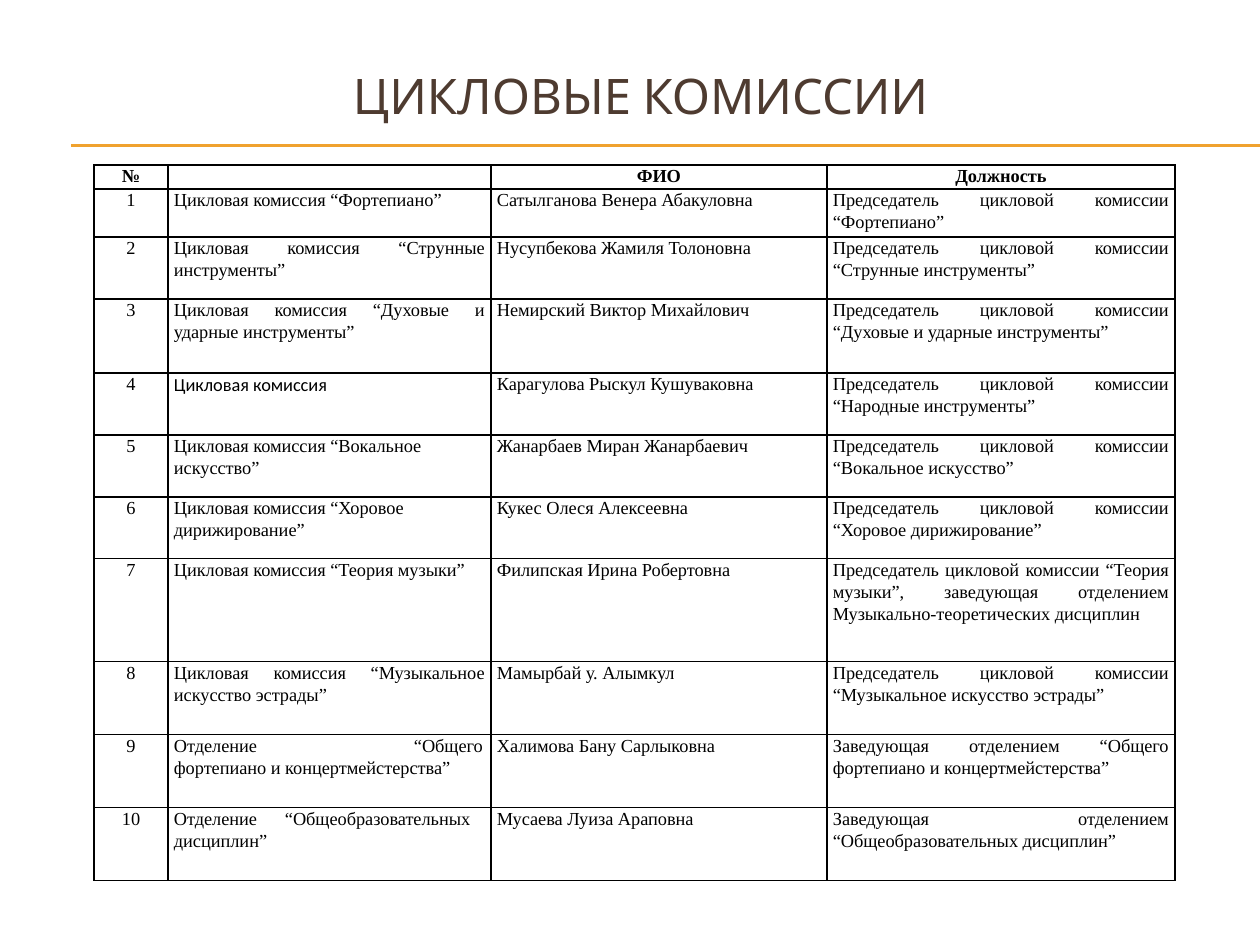
import pptx
import pptx.dml.color
import pptx.enum.shapes
import pptx.enum.text
import pptx.oxml
import pptx.oxml.ns
import pptx.util

ALIGN = pptx.enum.text.PP_ALIGN
HEADINGS = ["№", "", "ФИО", "Должность"]
CHAIR = "Председатель цикловой комиссии "
HEAD = "Заведующая отделением "
MEMBERS = [
    ("Цикловая комиссия “Фортепиано”", "Сатылганова Венера Абакуловна", CHAIR + "“Фортепиано”"),
    ("Цикловая комиссия “Струнные инструменты”", "Нусупбекова Жамиля Толоновна",
     CHAIR + "“Струнные инструменты”"),
    ("Цикловая комиссия “Духовые и ударные инструменты”", "Немирский Виктор Михайлович",
     CHAIR + "“Духовые и ударные инструменты”"),
    ("Цикловая комиссия", "Карагулова Рыскул Кушуваковна", CHAIR + "“Народные инструменты”"),
    ("Цикловая комиссия “Вокальное искусство”", "Жанарбаев Миран Жанарбаевич",
     CHAIR + "“Вокальное искусство”"),
    ("Цикловая комиссия “Хоровое дирижирование”", "Кукес Олеся Алексеевна",
     CHAIR + "“Хоровое дирижирование”"),
    ("Цикловая комиссия “Теория музыки”", "Филипская Ирина Робертовна",
     CHAIR + "“Теория музыки”, заведующая отделением Музыкально-теоретических дисциплин"),
    ("Цикловая комиссия “Музыкальное искусство эстрады”", "Мамырбай у. Алымкул",
     CHAIR + "“Музыкальное искусство эстрады”"),
    ("Отделение\t“Общего\vфортепиано и концертмейстерства”", "Халимова Бану Сарлыковна",
     HEAD + "“Общего фортепиано и концертмейстерства”"),
    ("Отделение\t“Общеобразовательных дисциплин”", "Мусаева Луиза Араповна",
     HEAD + "“Общеобразовательных дисциплин”"),
]
LEFT_ALIGNED = {4, 5, 6, 9, 10}
TAB_STOPS = {9: (309, "r"), 10: (111, "l")}
COLUMN_WIDTHS = [74, 323, 336, 348]
ROW_HEIGHTS = [24, 48, 62, 74, 62, 62, 62, 103, 73, 73, 73]


def px(length):
    """Turn px into EMU."""
    return pptx.util.Emu(round(length * 914400 / 126))


def color(value):
    """Turn a hex string into a colour."""
    return pptx.dml.color.RGBColor.from_string(value)


def add_xml(parent, tag, body="", **attributes):
    """Append a drawing element to a parent."""
    listed = "".join(f' {key}="{value}"' for key, value in attributes.items())
    namespace = pptx.oxml.ns.nsdecls("a")
    parent.append(pptx.oxml.parse_xml(f"<a:{tag} {namespace}{listed}>{body}</a:{tag}>"))


class Deck:
    """Hold the style and the current slide."""

    title_font = "Karla"
    table_font = "Times New Roman"
    title_color = "4E3B30"
    rule_color = "F0A22E"
    ink = "000000"

    def __init__(self):
        """Start a deck with one titled slide."""
        self.presentation = pptx.Presentation()
        self.presentation.slide_width = px(1260)
        self.presentation.slide_height = px(945)
        self.slide = self.presentation.slides.add_slide(self.presentation.slide_layouts[5])

    def style(self, paragraph, font, size, hex_color, align, bold=False):
        """Format a whole paragraph."""
        paragraph.alignment = align
        paragraph.font.name = font
        paragraph.font.size = pptx.util.Pt(size)
        paragraph.font.bold = bold
        paragraph.font.color.rgb = color(hex_color)

    def title(self, text, left, top, width, height):
        """Fill and place the title placeholder."""
        heading = self.slide.shapes.title
        heading.left, heading.top = px(left), px(top)
        heading.width, heading.height = px(width), px(height)
        heading.text_frame.text = text
        heading.text_frame.vertical_anchor = pptx.enum.text.MSO_ANCHOR.MIDDLE
        self.style(heading.text_frame.paragraphs[0], self.title_font, 28,
                   self.title_color, ALIGN.CENTER)

    def rule(self, left, right, y):
        """Draw a thin horizontal line."""
        rule = self.slide.shapes.add_connector(
            pptx.enum.shapes.MSO_CONNECTOR.STRAIGHT, px(left), px(y), px(right), px(y))
        rule.line.color.rgb = color(self.rule_color)
        rule.line.width = pptx.util.Pt(0.75)
        add_xml(rule._element.spPr, "effectLst")

    def table(self, left, top, widths, heights):
        """Add an unbanded table and return it."""
        table = self.slide.shapes.add_table(
            len(heights), len(widths), px(left), px(top), px(sum(widths)), px(sum(heights))).table
        table.first_row = table.horz_banding = False
        for column, width in zip(table.columns, widths):
            column.width = px(width)
        for row, height in zip(table.rows, heights):
            row.height = px(height)
        return table

    def cell(self, cell, text, align, bold=False, font=None, tab=None):
        """Write and format one bordered cell."""
        cell.margin_left = cell.margin_right = px(6)
        cell.margin_top = cell.margin_bottom = 0
        properties = cell._tc.get_or_add_tcPr()
        ink = f'<a:solidFill><a:srgbClr val="{self.ink}"/></a:solidFill>'
        for side in "LRTB":
            add_xml(properties, f"ln{side}", ink, w=pptx.util.Pt(1))
        cell.fill.background()
        cell.text_frame.text = text
        paragraph = cell.text_frame.paragraphs[0]
        paragraph.line_spacing = 1.07
        if tab:
            position, kind = tab
            add_xml(paragraph._p.get_or_add_pPr(), "tabLst",
                    f'<a:tab pos="{px(position)}" algn="{kind}"/>')
        self.style(paragraph, font or self.table_font, 10.5, self.ink, align, bold)


def main():
    """Build the slide and save it."""
    deck = Deck()
    for y in (145, 146):
        deck.rule(71, 1260, y)
    deck.title("ЦИКЛОВЫЕ КОМИССИИ", 42, 37, 1197, 116)
    table = deck.table(94, 165, COLUMN_WIDTHS, ROW_HEIGHTS)
    for column, heading in enumerate(HEADINGS):
        deck.cell(table.cell(0, column), heading, ALIGN.CENTER, bold=True)
    for number, (commission, person, post) in enumerate(MEMBERS, 1):
        deck.cell(table.cell(number, 0), str(number), ALIGN.CENTER)
        deck.cell(table.cell(number, 1), commission,
                  ALIGN.LEFT if number in LEFT_ALIGNED else ALIGN.JUSTIFY,
                  font="Calibri" if number == 4 else None, tab=TAB_STOPS.get(number))
        deck.cell(table.cell(number, 2), person, ALIGN.JUSTIFY)
        deck.cell(table.cell(number, 3), post, ALIGN.JUSTIFY)
    deck.presentation.save("out.pptx")


if __name__ == "__main__":
    main()
